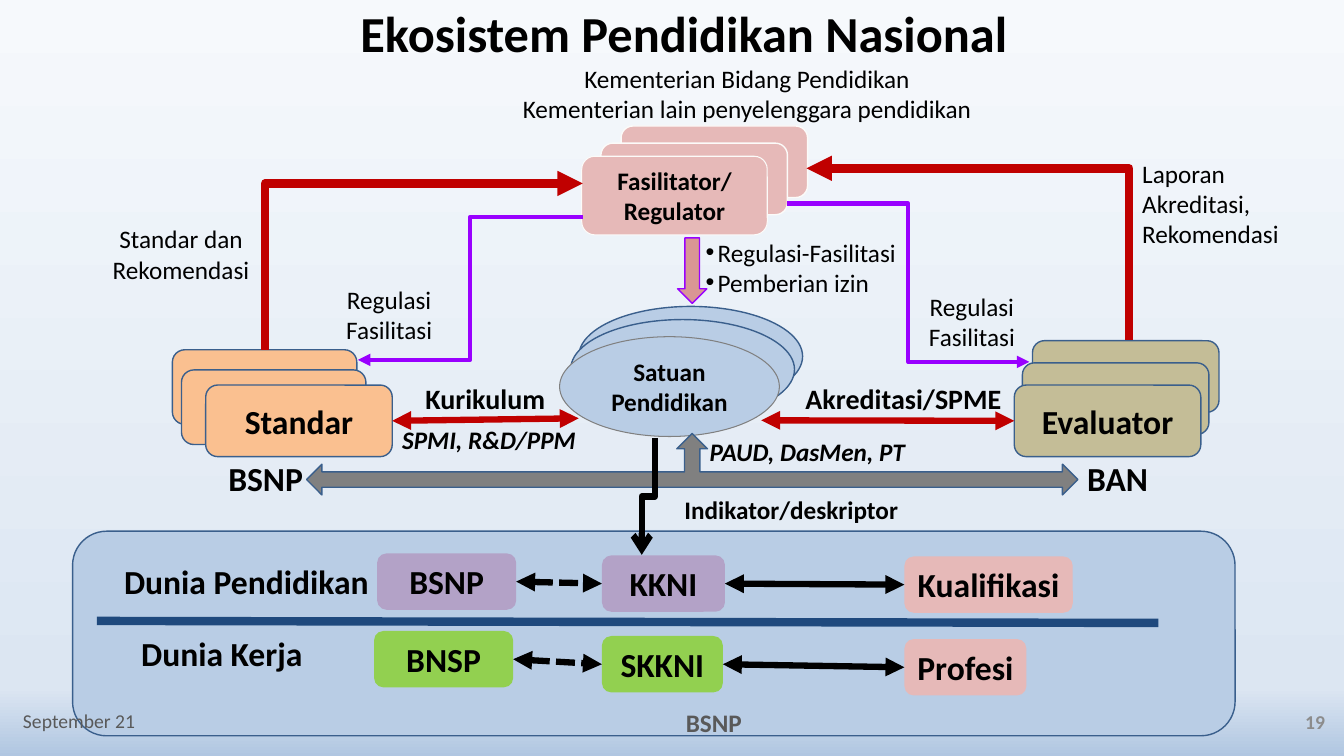
from dataclasses import dataclass

from lxml import etree
from pptx import Presentation
from pptx.dml.color import RGBColor
from pptx.enum import dml, shapes, text
from pptx.oxml.ns import qn
from pptx.util import Inches, Pt

KIND = shapes.MSO_SHAPE
ALIGN = text.PP_ALIGN
GROW = text.MSO_AUTO_SIZE.SHAPE_TO_FIT_TEXT
FIXED = text.MSO_AUTO_SIZE.NONE
MID = text.MSO_ANCHOR.MIDDLE
TOP = text.MSO_ANCHOR.TOP


@dataclass(frozen=True)
class Theme:
    font: str = "Calibri"
    black: str = "000000"
    gray: str = "595959"
    pale: str = "8C8C8C"
    steel: str = "808080"
    sky: str = "B9CDE5"
    edge: str = "3A5F8C"
    navy: str = "1F497D"
    rose: str = "E6B9B8"
    coral: str = "D99694"
    cream: str = "FCFBF9"
    peach: str = "FAC090"
    khaki: str = "C4BD97"
    mauve: str = "B3A2C7"
    green: str = "92D050"
    red: str = "C00000"
    violet: str = "9900FF"
    back: tuple = ((0, "F6F9FC"), (91, "DCE6F2"), (100, "B0C6E1"), (100, "CAD9EB"))
    title: int = 36
    large: int = 24
    medium: int = 20
    body: int = 18
    small: int = 14


T = Theme()


def color(code):
    return RGBColor.from_string(code)


def write(frame, words, size=T.body, ink=T.black, bold=False, slant=False,
          align=ALIGN.CENTER, anchor=TOP, wrap=True, fit=GROW, bullet=False, space=None):
    frame.word_wrap = wrap
    frame.auto_size = fit
    frame.vertical_anchor = anchor
    for i, line in enumerate(words.split("\n")):
        para = frame.paragraphs[0] if i == 0 else frame.add_paragraph()
        para.alignment = align
        if space:
            para.line_spacing = space
        if bullet:
            props = para._p.get_or_add_pPr()
            props.set("marL", str(Inches(0.12)))
            props.set("indent", str(-Inches(0.12)))
            etree.SubElement(props, qn("a:buFont")).set("typeface", "Arial")
            etree.SubElement(props, qn("a:buChar")).set("char", "•")
        run = para.add_run()
        run.text = line
        font = run.font
        font.name, font.size = T.font, Pt(size)
        font.bold, font.italic = bold, slant
        font.color.rgb = color(ink)


def label(slide, area, words, **form):
    box = slide.shapes.add_textbox(*map(Inches, area))
    write(box.text_frame, words, **form)


def block(slide, kind, area, fill, edge=None, width=1, words="", **form):
    item = slide.shapes.add_shape(kind, *map(Inches, area))
    item.shadow.inherit = False
    item.fill.solid()
    item.fill.fore_color.rgb = color(fill)
    if edge:
        item.line.color.rgb = color(edge)
        item.line.width = Pt(width)
    else:
        item.line.fill.background()
    if words:
        write(item.text_frame, words, bold=True, **form)
    return item


def stack(slide, kind, spots, size, fill, edge):
    for spot in spots:
        block(slide, kind, (*spot, *size), fill, edge)


def link(slide, start, end, ink, width, head=None, tail=None, dash=None, bend=None, turn=0):
    kind = shapes.MSO_CONNECTOR.ELBOW if bend else shapes.MSO_CONNECTOR.STRAIGHT
    wire = slide.shapes.add_connector(kind, *map(Inches, (*start, *end)))
    wire.line.color.rgb = color(ink)
    wire.line.width = Pt(width)
    if dash:
        wire.line.dash_style = dash
    props = wire._element.spPr
    if bend:
        props.find(qn("a:prstGeom")).set("prst", bend)
    if turn:
        props.find(qn("a:xfrm")).set("rot", str(turn * 60000))
    for tag, mark in (("a:headEnd", head), ("a:tailEnd", tail)):
        if mark:
            etree.SubElement(props.find(qn("a:ln")), qn(tag)).set("type", mark)
    etree.SubElement(props, qn("a:effectLst"))
    return wire


def paint(slide):
    fill = slide.background.fill
    fill.gradient()
    fill.gradient_angle = 270
    stops = next(slide._element.iter(qn("a:gsLst")))
    for stop in list(stops):
        stops.remove(stop)
    for place, code in T.back:
        stop = etree.SubElement(stops, qn("a:gs"), pos=str(place * 1000))
        etree.SubElement(stop, qn("a:srgbClr"), val=code)


def head(slide):
    title = slide.shapes.title
    title.left, title.top, title.width, title.height = map(Inches, (1.69, -0.22, 10.19, 1.16))
    write(title.text_frame, "Ekosistem Pendidikan Nasional", size=T.title, bold=True,
          anchor=MID, fit=FIXED, space=0.9)


def world(slide):
    block(slide, KIND.ROUNDED_RECTANGLE, (0.72, 5.27, 11.53, 2.03), T.sky, T.edge)
    link(slide, (0.96, 6.16), (11.49, 6.18), T.navy, 6)
    rows = (
        (("BSNP", 3.74, 5.49, 1.38, T.mauve), ("KKNI", 5.97, 5.51, 1.22, T.mauve),
         ("Kualifikasi", 8.97, 5.52, 1.67, T.rose)),
        (("BNSP", 3.71, 6.26, 1.38, T.green), ("SKKNI", 5.97, 6.31, 1.2, T.green),
         ("Profesi", 8.97, 6.34, 1.21, T.rose)),
    )
    for row in rows:
        boxes = [block(slide, KIND.ROUNDED_RECTANGLE, (x, y, w, 0.56), fill, words=name,
                       size=T.large, wrap=fill != T.rose)
                 for name, x, y, w, fill in row]
        for left, right, dash in zip(boxes, boxes[1:], (dml.MSO_LINE.SQUARE_DOT, None)):
            wire = link(slide, (5, 6), (6, 6), T.black, 4.5, "triangle", "triangle", dash)
            wire.begin_connect(left, 3)
            wire.end_connect(right, 1)
    label(slide, (1.08, 5.52, 2.73, 0.51), "Dunia Pendidikan", size=T.large, bold=True)
    label(slide, (1.19, 6.23, 2.02, 0.51), "Dunia Kerja", size=T.large, bold=True)


def actors(slide):
    card = KIND.ROUNDED_RECTANGLE
    stack(slide, KIND.OVAL, ((5.74, 3.04), (5.66, 3.17)), (2.22, 0.99), T.sky, T.edge)
    block(slide, KIND.OVAL, (5.55, 3.34, 2.18, 0.99), T.sky, T.steel, 0.75,
          "Satuan\nPendidikan", wrap=False)
    stack(slide, card, ((1.71, 3.47), (1.8, 3.67)), (1.83, 0.74), T.peach, T.edge)
    stack(slide, card, ((10.24, 3.38), (10.14, 3.6)), (1.85, 0.71), T.khaki, T.edge)
    stack(slide, card, ((6.16, 1.25), (5.96, 1.42)), (1.85, 0.71), T.rose, T.cream)
    block(slide, card, (5.77, 1.55, 1.84, 0.78), T.rose, T.cream, 0.75, "Fasilitator/\nRegulator")
    norm, judge = [
        block(slide, card, (x, 3.82, 1.85, 0.71), fill, T.edge, words=name,
              size=T.large, anchor=MID, fit=FIXED)
        for x, fill, name in ((2.04, T.peach, "Standar"), (10.06, T.khaki, "Evaluator"))]
    wire = link(slide, (3.92, 4.17), (5.74, 4.15), T.red, 4.5, "triangle", "triangle")
    wire.begin_connect(norm, 3)
    wire = link(slide, (7.55, 4.17), (10.05, 4.17), T.red, 4.5, "triangle", "triangle")
    wire.end_connect(judge, 1)


def notes(slide):
    left = ALIGN.LEFT
    for area, words in (((6.69, 4.85, 2.35, 0.4), "Indikator/deskriptor"),
                        ((6.94, 4.28, 2.16, 0.4), "PAUD, DasMen, PT"),
                        ((3.89, 4.16, 1.94, 0.4), "SPMI, R&D/PPM")):
        label(slide, area, words, bold=True, slant=words != "Indikator/deskriptor",
              align=left, wrap=False)
    for x, w, words in ((7.89, 2.16, "Akreditasi/SPME"), (4.12, 1.4, "Kurikulum")):
        label(slide, (x, 3.74, w, 0.44), words, size=T.medium, bold=True, align=left, wrap=False)
    for x, w, words in ((10.68, 0.81, "BAN"), (2.16, 0.95, "BSNP")):
        label(slide, (x, 4.49, w, 0.5), words, size=T.large, bold=True, wrap=False)
    label(slide, (6.9, 2.3, 2.16, 0.71), "Regulasi-Fasilitasi\nPemberian izin",
          align=left, wrap=False, bullet=True)
    label(slide, (5.01, 0.58, 4.8, 0.71),
          "Kementerian Bidang Pendidikan\nKementerian lain penyelenggara pendidikan", wrap=False)
    label(slide, (0.99, 2.17, 1.61, 0.71), "Standar dan Rekomendasi")
    label(slide, (11.23, 1.52, 1.62, 1.01), "Laporan Akreditasi, Rekomendasi", align=left)
    for x, y in ((9.02, 2.84), (3.24, 2.77)):
        label(slide, (x, y, 1.24, 0.71), "Regulasi\nFasilitasi")


def flows(slide):
    block(slide, KIND.LEFT_RIGHT_UP_ARROW, (3.04, 4.3, 7.65, 0.61), T.steel, T.edge)
    link(slide, (5.85, 4.86), (7.01, 4.99), T.black, 4.5, tail="arrow",
         bend="bentConnector3", turn=90)
    for start, end in (((8, 1.67), (11.2, 3.37)), ((5.78, 1.82), (2.63, 3.47))):
        link(slide, start, end, T.red, 6, head="triangle", bend="bentConnector2")
    block(slide, KIND.DOWN_ARROW, (6.72, 2.36, 0.29, 0.65), T.coral, T.violet)
    for start, end in (((7.81, 2.02), (10.21, 3.59)), ((5.78, 2.15), (3.55, 3.57))):
        link(slide, start, end, T.violet, 3, tail="triangle", bend="bentConnector3")


def foot(slide):
    label(slide, (0.13, 6.95, 3, 0.4), "September 21", size=T.small, ink=T.gray,
          align=ALIGN.LEFT, anchor=MID, fit=FIXED)
    label(slide, (4.83, 6.97, 4.5, 0.4), "BSNP", ink=T.gray, bold=True, anchor=MID, fit=FIXED)
    label(slide, (10.24, 6.96, 3, 0.4), "19", size=T.small, ink=T.pale, bold=True,
          align=ALIGN.RIGHT, anchor=MID, fit=FIXED)


def main():
    deck = Presentation()
    deck.slide_width, deck.slide_height = Inches(13.33), Inches(7.5)
    slide = deck.slides.add_slide(deck.slide_layouts[5])
    for part in (paint, head, world, actors, notes, flows, foot):
        part(slide)
    deck.save("out.pptx")


if __name__ == "__main__":
    main()
